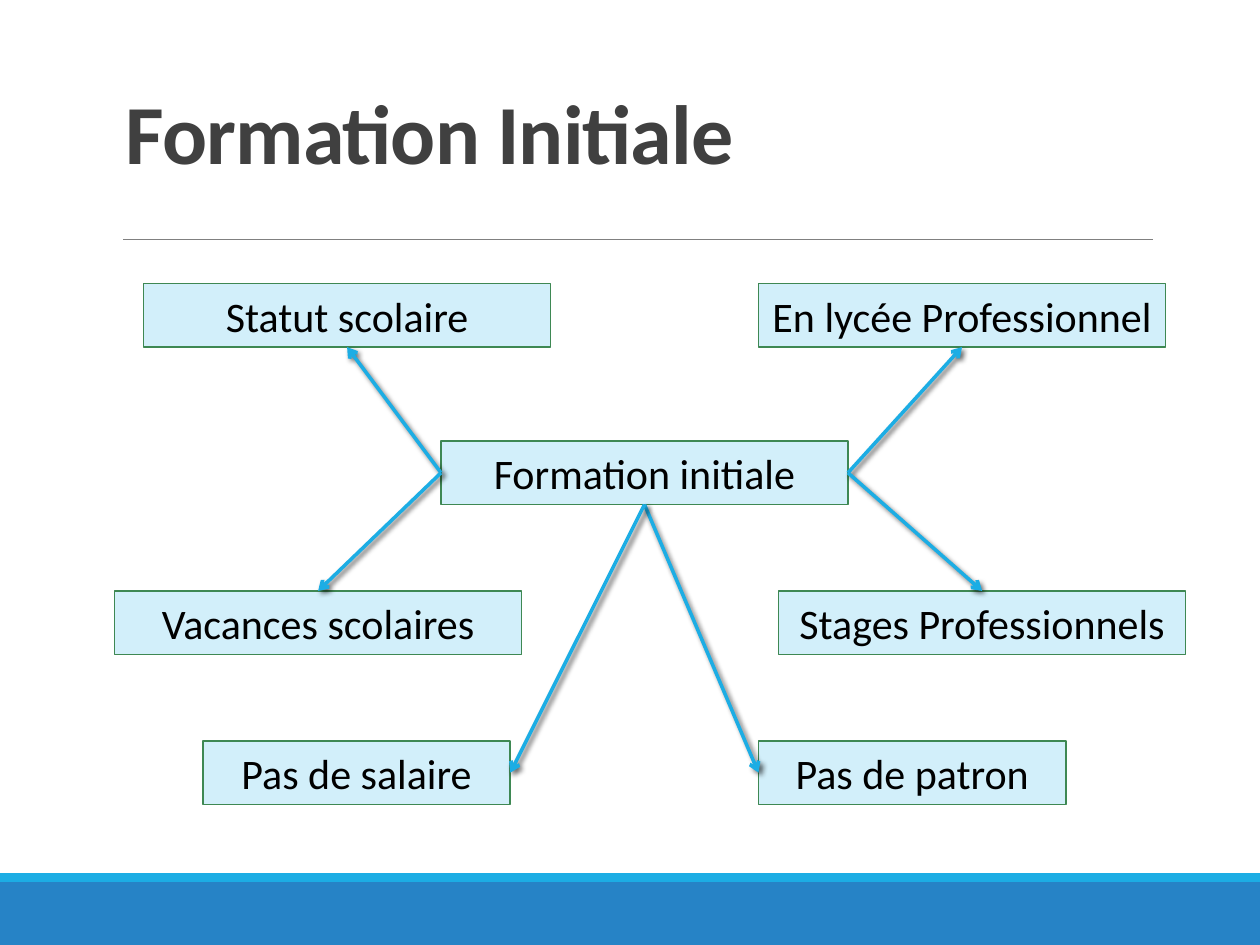
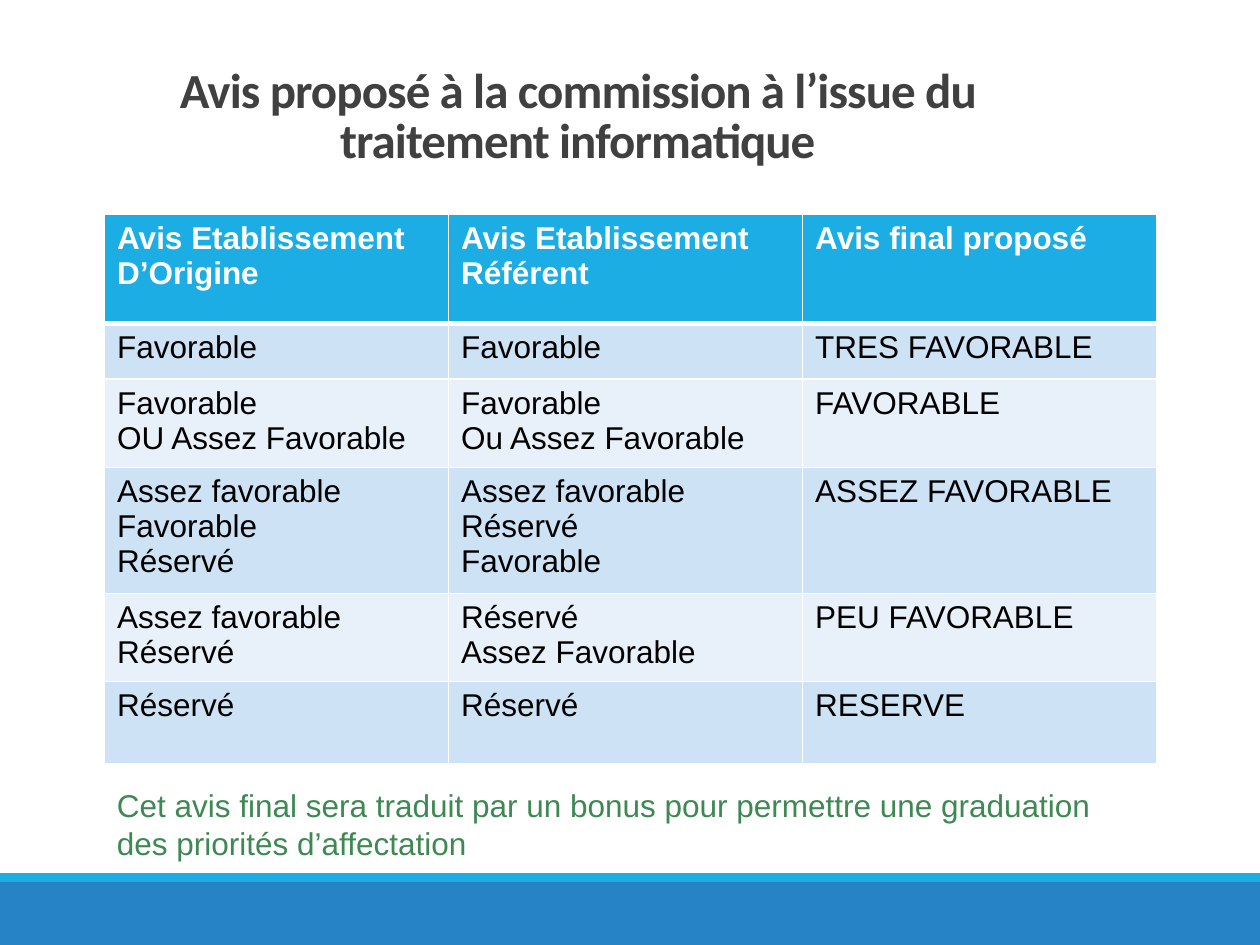
from dataclasses import dataclass

from lxml.etree import SubElement
from pptx import Presentation
from pptx.dml.color import RGBColor
from pptx.enum.shapes import MSO_CONNECTOR, MSO_SHAPE
from pptx.enum.text import MSO_ANCHOR, MSO_AUTO_SIZE, PP_ALIGN
from pptx.oxml import parse_xml
from pptx.oxml.ns import nsdecls, qn
from pptx.util import Inches, Pt

# The page is a grid of 100 columns by 75 rows
CELL = Inches(0.1)
COLUMNS, ROWS = 100, 75

COLORS = {
    "band": "2683C6",
    "accent": "1CADE4",
    "rule": "808080",
    "title": "404040",
    "card": "D2EFFA",
    "green": "3E8853",
    "text": "000000",
    "white": "FFFFFF",
    "odd_row": "CDE3F5",
    "even_row": "E8F1FA",
}

FORMATS = {
    "title": {"name": "Calibri", "size": Pt(48), "bold": True, "color": "title"},
    "small_title": {"name": "Calibri", "size": Pt(28), "bold": True, "color": "title"},
    "card": {"name": "Calibri", "size": Pt(24), "bold": False, "color": "text"},
    "header": {"name": "Arial", "size": Pt(18), "bold": True, "color": "white"},
    "cell": {"name": "Arial", "size": Pt(18), "bold": False, "color": "text"},
    "note": {"name": "Arial", "size": Pt(18), "bold": False, "color": "green"},
}

# Connection sites of a rectangle
TOP, LEFT, BOTTOM, RIGHT = range(4)


@dataclass
class Box:
    """An area of the page, in grid columns and rows."""
    left: float
    top: float
    width: float
    height: float

    def area(self, left, top, width, height):
        return Box(self.left + left, self.top + top, width, height)

    def lengths(self):
        return [round(value * CELL) for value in
                (self.left, self.top, self.width, self.height)]


PAGE = Box(0, 0, COLUMNS, ROWS)

CARD_WIDTH, SMALL_CARD_WIDTH, CARD_HEIGHT = 32.3, 24.4, 5.05
HUB = ("Formation initiale", 26, 12.5, CARD_WIDTH)
# Text, column, row, width, site on the hub, site on the card
BRANCHES = [
    ("Statut scolaire", 2.4, 0, CARD_WIDTH, LEFT, BOTTOM),
    ("En lycée Professionnel", 51.2, 0, CARD_WIDTH, RIGHT, BOTTOM),
    ("Stages Professionnels", 52.8, 24.4, CARD_WIDTH, RIGHT, TOP),
    ("Vacances scolaires", 0.1, 24.4, CARD_WIDTH, LEFT, TOP),
    ("Pas de patron", 51.2, 36.3, SMALL_CARD_WIDTH, BOTTOM, LEFT),
    ("Pas de salaire", 7.1, 36.3, SMALL_CARD_WIDTH, BOTTOM, RIGHT),
]

TABLE_COLUMNS = [27.3, 28.1, 28.1]
TABLE_ROWS = [8.7, 4.4, 6.6, 9.4, 6.7, 6.5]
OPINIONS = [
    ["Avis Etablissement D’Origine", "Avis Etablissement Référent", "Avis final proposé"],
    ["Favorable", "Favorable", "TRES FAVORABLE"],
    ["Favorable\nOU Assez Favorable", "Favorable\nOu Assez Favorable", "FAVORABLE"],
    ["Assez favorable\nFavorable\nRéservé", "Assez favorable\nRéservé\nFavorable",
     "ASSEZ FAVORABLE"],
    ["Assez favorable\nRéservé", "Réservé\nAssez Favorable", "PEU FAVORABLE"],
    ["Réservé", "Réservé", "RESERVE"],
]


def color(name):
    return RGBColor.from_string(COLORS[name])


def write(frame, text, style, align=PP_ALIGN.LEFT):
    """Write one paragraph per line of text."""
    frame.word_wrap = True
    for index, line in enumerate(text.split("\n")):
        para = frame.add_paragraph() if index else frame.paragraphs[0]
        para.alignment = align
        span = para.add_run()
        span.text = line
        for name, value in FORMATS[style].items():
            if name == "color":
                span.font.color.rgb = color(value)
            else:
                setattr(span.font, name, value)


def add_rectangle(page, box, fill, line=None):
    shape = page.shapes.add_shape(MSO_SHAPE.RECTANGLE, *box.lengths())
    shape.shadow.inherit = False
    shape.fill.solid()
    shape.fill.fore_color.rgb = color(fill)
    if line:
        shape.line.color.rgb = color(line)
        shape.line.width = Pt(1)
    else:
        shape.line.fill.background()
    return shape


def add_line(page, line_color, width, start=(0, 0), end=(0, 0)):
    """Draw a line and return it with its empty list of effects."""
    points = [round(value * CELL) for value in (*start, *end)]
    line = page.shapes.add_connector(MSO_CONNECTOR.STRAIGHT, *points)
    line.line.color.rgb = color(line_color)
    line.line.width = Pt(width)
    effects = SubElement(line._element.spPr, qn("a:effectLst"))
    return line, effects


def add_arrow(page, hub, hub_site, card, card_site):
    arrow, effects = add_line(page, "accent", 2)
    arrow.begin_connect(hub, hub_site)
    arrow.end_connect(card, card_site)
    SubElement(arrow.get_or_add_ln(), qn("a:tailEnd"), type="arrow")
    effects.append(parse_xml(
        f'<a:outerShdw {nsdecls("a")} blurRad="{Pt(3)}" dist="{Pt(2)}" '
        'dir="2700000" rotWithShape="0"><a:srgbClr val="000000">'
        '<a:alpha val="60000"/></a:srgbClr></a:outerShdw>'))


def add_card(page, body, text, column, row, width):
    card = add_rectangle(page, body.area(column, row, width, CARD_HEIGHT),
                         "card", "green")
    write(card.text_frame, text, "card", PP_ALIGN.CENTER)
    card.text_frame.auto_size = MSO_AUTO_SIZE.SHAPE_TO_FIT_TEXT
    return card


def add_title(page, box, text, style, anchor, align=PP_ALIGN.LEFT):
    frame = page.shapes.add_textbox(*box.lengths()).text_frame
    frame.vertical_anchor = anchor
    write(frame, text, style, align)
    para = frame.paragraphs[0]
    para.line_spacing = 0.85
    para.runs[0]._r.get_or_add_rPr().set("spc", "-50")


def add_footer_bands(page, box):
    add_rectangle(page, box.area(0, 0.7, box.width, box.height - 0.7), "band")
    add_rectangle(page, box.area(0, 0, box.width, 0.7), "accent")


def add_page(deck):
    page = deck.slides.add_slide(deck.slide_layouts[6])
    add_footer_bands(page, PAGE.area(0, 69.3, COLUMNS, 5.7))
    return page


def add_diagram(page, body):
    """Place the hub, its branches and the arrows between them."""
    hub = add_card(page, body, *HUB)
    cards = [add_card(page, body, *branch[:4]) for branch in BRANCHES]
    for card, branch in zip(cards, BRANCHES):
        hub_site, card_site = branch[4:]
        add_arrow(page, hub, hub_site, card, card_site)


def set_borders(cell, bottom_width):
    properties = cell._tc.get_or_add_tcPr()
    widths = {"lnL": 1, "lnR": 1, "lnT": 1, "lnB": bottom_width}
    for index, (side, width) in enumerate(widths.items()):
        properties.insert(index, parse_xml(
            f'<a:{side} {nsdecls("a")} w="{Pt(width)}"><a:solidFill>'
            f'<a:srgbClr val="{COLORS["white"]}"/></a:solidFill></a:{side}>'))


def add_opinion_table(page, box):
    table = page.shapes.add_table(len(TABLE_ROWS), len(TABLE_COLUMNS),
                                  *box.lengths()).table
    table.horz_banding = False
    for column, width in zip(table.columns, TABLE_COLUMNS):
        column.width = round(width * CELL)
    for index, (row, height) in enumerate(zip(table.rows, TABLE_ROWS)):
        row.height = round(height * CELL)
        band = "odd_row" if index % 2 else "even_row"
        fill, style = (band, "cell") if index else ("accent", "header")
        for cell, text in zip(row.cells, OPINIONS[index]):
            cell.fill.solid()
            cell.fill.fore_color.rgb = color(fill)
            set_borders(cell, 1 if index else 3)
            write(cell.text_frame, text, style)


def build_training_page(deck):
    page = add_page(deck)
    # Title and its rule
    add_line(page, "rule", 0.5, (9.8, 19), (91.5, 19))
    add_title(page, PAGE.area(9, 3.1, 82.5, 15.9), "Formation Initiale",
              "title", MSO_ANCHOR.MIDDLE)
    # Hub and branches
    add_diagram(page, PAGE.area(9, 22.5, 85, 42))


def build_opinion_page(deck):
    page = add_page(deck)
    # Title
    add_title(page, PAGE.area(5, 3, 81.7, 10.9),
              "Avis proposé à la commission à l’issue du traitement informatique",
              "small_title", MSO_ANCHOR.BOTTOM, PP_ALIGN.CENTER)
    # Table
    add_opinion_table(page, PAGE.area(8.3, 17, sum(TABLE_COLUMNS), sum(TABLE_ROWS)))
    # Closing note
    note = page.shapes.add_textbox(*PAGE.area(8.3, 61.9, 80.9, 7.1).lengths())
    write(note.text_frame,
          "Cet avis final sera traduit par un bonus pour permettre une graduation "
          "des priorités d’affectation", "note")
    note.text_frame.auto_size = MSO_AUTO_SIZE.SHAPE_TO_FIT_TEXT


def main():
    deck = Presentation()
    deck.slide_width = COLUMNS * CELL
    deck.slide_height = ROWS * CELL
    build_training_page(deck)
    build_opinion_page(deck)
    deck.save("out.pptx")


if __name__ == "__main__":
    main()
